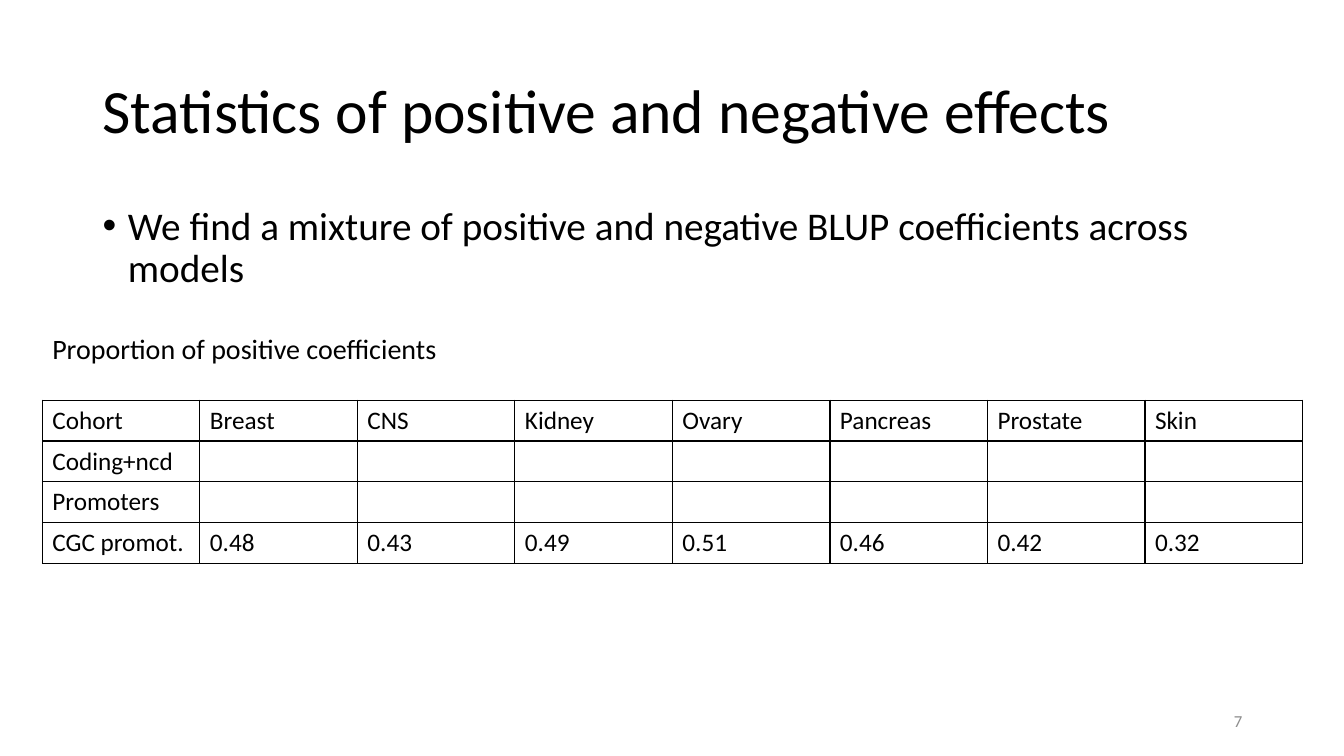
"""Build a slide on the share of positive coefficients per cohort."""
from lxml import etree
from pptx import Presentation
from pptx.dml.color import RGBColor
from pptx.enum.text import MSO_ANCHOR, PP_ALIGN
from pptx.oxml.ns import qn
from pptx.util import Inches, Pt

TOP, MIDDLE = MSO_ANCHOR.TOP, MSO_ANCHOR.MIDDLE
LEFT, RIGHT = PP_ALIGN.LEFT, PP_ALIGN.RIGHT

THEME = {
    "font": "Calibri", "ink": "000000", "muted": "8C8C8C",
    "title": 44, "body": 28, "label": 20, "cell": 18, "page": 12,
    "rule": 1,
}

TEXTS = [
    {"text": "Statistics of positive and negative effects",
     "box": (0.92, 0.4, 11.5, 1.45), "size": "title", "anchor": MIDDLE,
     "para": {"line_spacing": 0.9}},
    {"text": "We find a mixture of positive and negative BLUP coefficients across models",
     "box": (0.92, 2, 11.5, 4.76), "size": "body", "bullet": "•",
     "para": {"line_spacing": 0.9, "space_before": Pt(10)}},
    {"text": "7", "box": (9.42, 6.95, 3, 0.4), "size": "page",
     "color": "muted", "anchor": MIDDLE, "para": {"alignment": RIGHT}},
    {"text": "Proportion of positive coefficients",
     "box": (0.42, 3.24, 7.01, 0.44), "size": "label"},
]

BLANK = [""] * 7
ROWS = [
    ["Cohort", "Breast", "CNS", "Kidney", "Ovary", "Pancreas", "Prostate", "Skin"],
    ["Coding+ncd", *BLANK],
    ["Promoters", *BLANK],
    ["CGC promot.", "0.48", "0.43", "0.49", "0.51", "0.46", "0.42", "0.32"],
]
GRID = (0.42, 3.97, 12.5, 1.62)
PLAIN = {"first_row": False, "horz_banding": False}


def assign(target, values):
    for name, value in values.items():
        setattr(target, name, value)


def style(font, size, color="ink"):
    assign(font, {"name": THEME["font"], "size": Pt(THEME[size])})
    font.color.rgb = RGBColor.from_string(THEME[color])


def add_bullet(para, mark):
    props = para._p.get_or_add_pPr()
    props.set("marL", str(Inches(0.25)))
    props.set("indent", str(Inches(-0.25)))
    face = etree.SubElement(props, qn("a:buFont"))
    face.set("typeface", "Arial")
    etree.SubElement(props, qn("a:buChar")).set("char", mark)


def add_text(slide, item):
    frame = slide.shapes.add_textbox(*map(Inches, item["box"])).text_frame
    assign(frame, {"word_wrap": True, "vertical_anchor": item.get("anchor", TOP)})
    para = frame.paragraphs[0]
    assign(para, {"alignment": LEFT, **item.get("para", {})})
    if "bullet" in item:
        add_bullet(para, item["bullet"])
    run = para.add_run()
    run.text = item["text"]
    style(run.font, item["size"], item.get("color", "ink"))


def add_rules(cell):
    props = cell._tc.get_or_add_tcPr()
    for spot, side in enumerate(("lnL", "lnR", "lnT", "lnB")):
        line = etree.Element(qn("a:" + side), w=str(Pt(THEME["rule"])))
        fill = etree.SubElement(line, qn("a:solidFill"))
        etree.SubElement(fill, qn("a:srgbClr")).set("val", THEME["ink"])
        props.insert(spot, line)


def add_grid(slide):
    box = map(Inches, GRID)
    table = slide.shapes.add_table(len(ROWS), len(ROWS[0]), *box).table
    assign(table, PLAIN)
    for r, row in enumerate(ROWS):
        for c, text in enumerate(row):
            cell = table.cell(r, c)
            cell.text = text
            style(cell.text_frame.paragraphs[0].font, "cell")
            for run in cell.text_frame.paragraphs[0].runs:
                style(run.font, "cell")
            cell.fill.background()
            add_rules(cell)


def main():
    deck = Presentation()
    assign(deck, {"slide_width": Inches(13.33), "slide_height": Inches(7.5)})
    slide = deck.slides.add_slide(deck.slide_layouts[6])
    for item in TEXTS:
        add_text(slide, item)
    add_grid(slide)
    deck.save("out.pptx")


if __name__ == "__main__":
    main()
